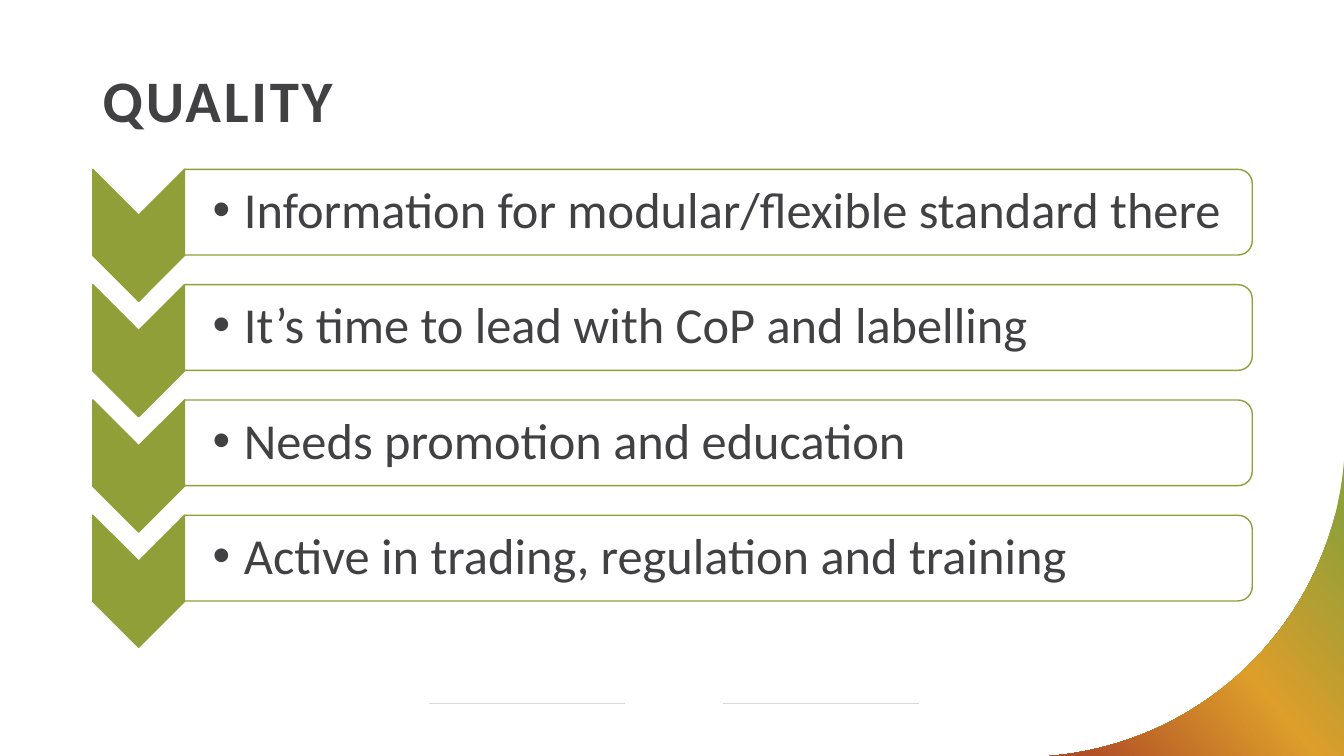
from dataclasses import dataclass
from math import cos, pi, sin

from lxml import etree
from pptx import Presentation
from pptx.dml.color import RGBColor
from pptx.enum.shapes import MSO_CONNECTOR, MSO_SHAPE
from pptx.enum.text import MSO_ANCHOR
from pptx.oxml import parse_xml
from pptx.oxml.ns import nsdecls, qn
from pptx.shapes.autoshape import Shape
from pptx.shapes.shapetree import GroupShapes, SlideShapes
from pptx.text.text import _Paragraph
from pptx.util import Inches, Pt

STRAIGHT = MSO_CONNECTOR.STRAIGHT
CHEVRON = MSO_SHAPE.CHEVRON
ROUNDED_TOP = MSO_SHAPE.ROUND_2_SAME_RECTANGLE
MIDDLE = MSO_ANCHOR.MIDDLE

FONT = "Calibri"
GREEN = "919F39"
DARK = "414042"
WHITE = "FFFFFF"
RULE_GREY = "D9D8DA"

ROW_PITCH = 1.144
CHEVRON_LENGTH, CHEVRON_BREADTH = 1.31, 0.91
PANEL_LEFT, PANEL_WIDTH, PANEL_HEIGHT = 1.83, 10.59, 0.85
FIRST_PANEL_TOP = 1.68
LABEL_WIDTH, LABEL_HEIGHT = 10.54, 0.77
CURVE_RADIUS = 3.19
CURVE_CENTER_X, CURVE_CENTER_Y = 10.15, 4.32
CURVE_STEPS = 60


@dataclass(frozen=True)
class QualityPoint:
    text: str
    row: int

    @property
    def top(self) -> float:
        return FIRST_PANEL_TOP + self.row * ROW_PITCH


@dataclass(frozen=True)
class GradientStop:
    position: int
    color: str


QUALITY_POINTS = [
    QualityPoint(text, row)
    for row, text in enumerate([
        "Information for modular/flexible standard there",
        "It’s time to lead with CoP and labelling",
        "Needs promotion and education",
        "Active in trading, regulation and training",
    ])
]
CORNER_STOPS = [GradientStop(12, GREEN), GradientStop(50, "DD9E2A"), GradientStop(91, "AF4C26")]
FOOTER_RULE_LEFTS = [4.25, 7.17]
FOOTER_RULE_WIDTH, FOOTER_RULE_TOP = 1.95, 6.98


def rgb(color: str) -> RGBColor:
    return RGBColor.from_string(color)


def format_runs(paragraph: _Paragraph, size: float, bold: bool = False) -> None:
    paragraph.line_spacing = 0.9
    for run in paragraph.runs:
        run.font.name = FONT
        run.font.size = Pt(size)
        run.font.bold = bold
        run.font.color.rgb = rgb(DARK)


def add_footer_rule(shapes: SlideShapes, left: float) -> None:
    rule = shapes.add_connector(
        STRAIGHT, Inches(left), Inches(FOOTER_RULE_TOP),
        Inches(left + FOOTER_RULE_WIDTH), Inches(FOOTER_RULE_TOP),
    )
    rule.line.color.rgb = rgb(RULE_GREY)
    rule.line.width = Pt(0.5)
    etree.SubElement(rule._element.spPr, qn("a:effectLst"))


def add_corner(shapes: SlideShapes) -> None:
    angles = [step * pi / 2 / CURVE_STEPS for step in range(CURVE_STEPS + 1)]
    curve = [
        (Inches(CURVE_CENTER_X + CURVE_RADIUS * cos(angle)),
         Inches(CURVE_CENTER_Y + CURVE_RADIUS * sin(angle)))
        for angle in angles
    ]
    builder = shapes.build_freeform(*curve[0])
    corner_point = (curve[0][0], curve[-1][1])
    builder.add_line_segments(curve[1:] + [corner_point], close=True)
    corner = builder.convert_to_shape()
    corner.shadow.inherit = False
    corner.line.fill.background()
    stops = "".join(
        f'<a:gs pos="{stop.position * 1000}"><a:srgbClr val="{stop.color}"/></a:gs>'
        for stop in CORNER_STOPS
    )
    gradient = parse_xml(
        f'<a:gradFill {nsdecls("a")} rotWithShape="1"><a:gsLst>{stops}</a:gsLst>'
        f'<a:lin ang="{140 * 60000}" scaled="0"/></a:gradFill>'
    )
    corner._element.spPr.find(qn("a:custGeom")).addnext(gradient)


def add_title(shapes: SlideShapes) -> None:
    title = shapes.add_textbox(Inches(0.92), Inches(0.66), Inches(11.5), Inches(1.02))
    title.text_frame.word_wrap = True
    title.text_frame.text = "QUALITY"
    paragraph = title.text_frame.paragraphs[0]
    format_runs(paragraph, 42, bold=True)
    paragraph.runs[0].font._element.set("spc", "200")


def add_turned_shape(
    shapes: GroupShapes, preset: MSO_SHAPE, center_x: float, center_y: float,
    length: float, breadth: float, fill: str,
) -> Shape:
    shape = shapes.add_shape(
        preset, Inches(center_x - length / 2), Inches(center_y - breadth / 2),
        Inches(length), Inches(breadth),
    )
    shape.rotation = 90
    shape.shadow.inherit = False
    shape.fill.solid()
    shape.fill.fore_color.rgb = rgb(fill)
    shape.line.color.rgb = rgb(GREEN)
    shape.line.width = Pt(1)
    return shape


def add_label(shapes: GroupShapes, point: QualityPoint) -> None:
    label = shapes.add_textbox(
        Inches(PANEL_LEFT), Inches(point.top + (PANEL_HEIGHT - LABEL_HEIGHT) / 2),
        Inches(LABEL_WIDTH), Inches(LABEL_HEIGHT),
    )
    frame = label.text_frame
    frame.word_wrap = True
    frame.vertical_anchor = MIDDLE
    frame.margin_left = Inches(0.28)
    frame.margin_right = frame.margin_top = frame.margin_bottom = Inches(0.03)
    frame.text = point.text
    paragraph = frame.paragraphs[0]
    paragraph.level = 1
    properties = paragraph._p.get_or_add_pPr()
    properties.set("marL", str(Inches(0.31)))
    properties.set("indent", str(-Inches(0.31)))
    etree.SubElement(properties, qn("a:buFont")).set("typeface", "Arial")
    etree.SubElement(properties, qn("a:buChar")).set("char", "•")
    paragraph.space_after = Pt(5.4)
    format_runs(paragraph, 36)


def add_quality_point(shapes: GroupShapes, point: QualityPoint) -> None:
    add_turned_shape(
        shapes, CHEVRON, PANEL_LEFT - CHEVRON_BREADTH / 2, point.top + CHEVRON_LENGTH / 2,
        CHEVRON_LENGTH, CHEVRON_BREADTH, GREEN,
    )
    panel = add_turned_shape(
        shapes, ROUNDED_TOP, PANEL_LEFT + PANEL_WIDTH / 2, point.top + PANEL_HEIGHT / 2,
        PANEL_HEIGHT, PANEL_WIDTH, WHITE,
    )
    panel_color = panel._element.spPr.find(qn("a:solidFill")).find(qn("a:srgbClr"))
    etree.SubElement(panel_color, qn("a:alpha")).set("val", "90000")
    add_label(shapes, point)


def main() -> None:
    presentation = Presentation()
    presentation.slide_width = Inches(13.33)
    presentation.slide_height = Inches(7.5)
    slide = presentation.slides.add_slide(presentation.slide_layouts[6])
    for left in FOOTER_RULE_LEFTS:
        add_footer_rule(slide.shapes, left)
    add_corner(slide.shapes)
    add_title(slide.shapes)
    point_list = slide.shapes.add_group_shape()
    for point in QUALITY_POINTS:
        add_quality_point(point_list.shapes, point)
    presentation.save("out.pptx")


if __name__ == "__main__":
    main()
